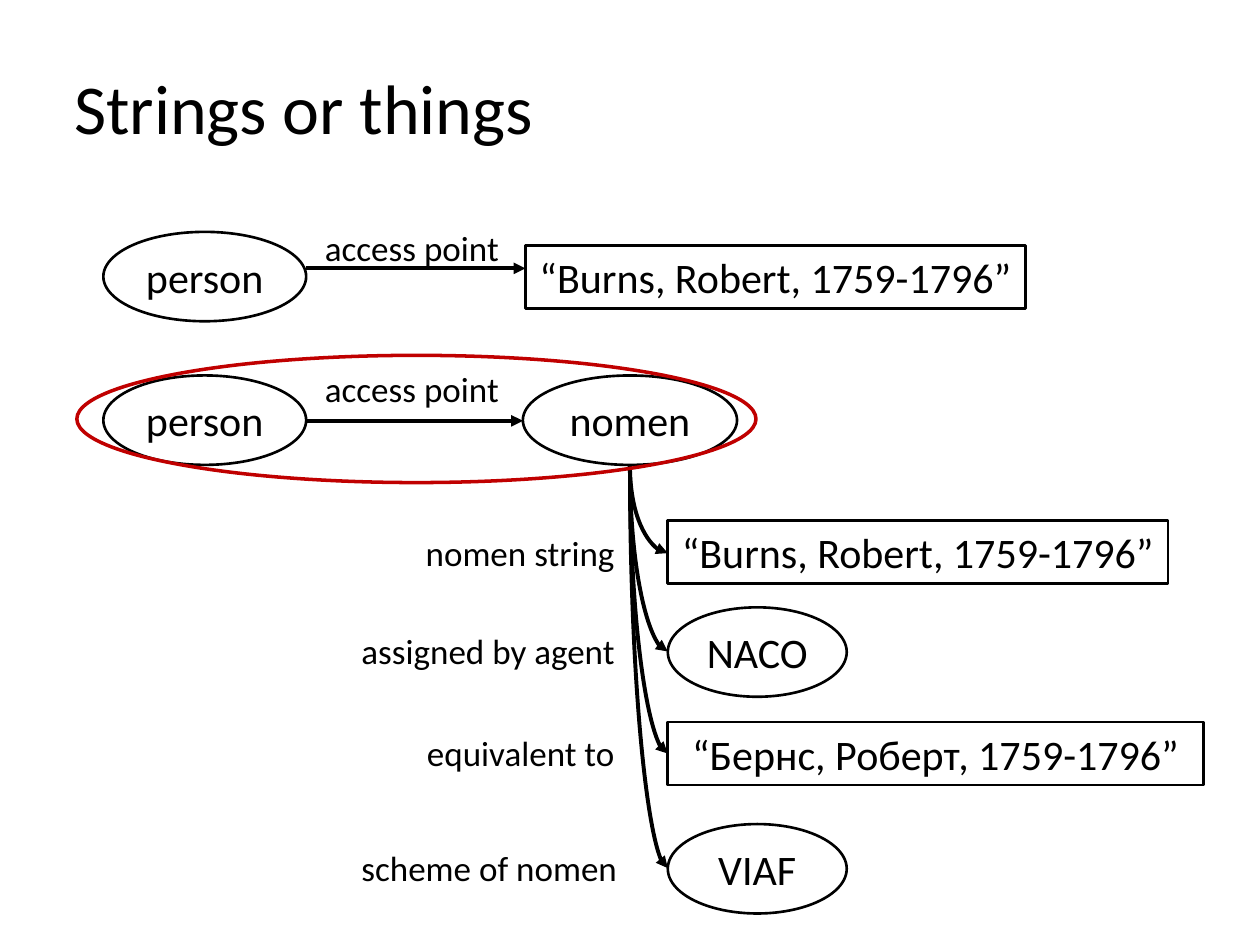
from lxml import etree
from pptx import Presentation
from pptx.dml.color import RGBColor
from pptx.enum.shapes import MSO_CONNECTOR, MSO_SHAPE
from pptx.enum.text import MSO_AUTO_SIZE, MSO_VERTICAL_ANCHOR, PP_ALIGN
from pptx.oxml.ns import qn
from pptx.util import Inches, Pt

OVAL, BOX = MSO_SHAPE.OVAL, MSO_SHAPE.RECTANGLE
CURVE = MSO_CONNECTOR.CURVE
LEFT, CENTER = PP_ALIGN.LEFT, PP_ALIGN.CENTER
TOP, MIDDLE = MSO_VERTICAL_ANCHOR.TOP, MSO_VERTICAL_ANCHOR.MIDDLE
GROW = MSO_AUTO_SIZE.SHAPE_TO_FIT_TEXT
BLACK = RGBColor(0x00, 0x00, 0x00)
RED = RGBColor(0xC0, 0x00, 0x00)


class Diagram:
    """Draws labelled nodes and arrows on one slide in a shared style."""

    font_name = "Calibri"
    node_size, label_size, title_size = 24, 20, 40
    node_line, arrow_line = 1.5, 2.25

    def __init__(self, slide):
        self.shapes = slide.shapes

    def set_text(self, frame, text, size, align, anchor):
        layout = {"word_wrap": False, "auto_size": GROW, "vertical_anchor": anchor}
        for name, value in layout.items():
            setattr(frame, name, value)
        paragraph = frame.paragraphs[0]
        paragraph.text = text
        paragraph.alignment = align
        for name, value in {"name": self.font_name, "size": Pt(size)}.items():
            setattr(paragraph.font, name, value)
        paragraph.font.color.rgb = BLACK

    def label(self, text, left, top, width, height=0.44, size=label_size):
        area = self.shapes.add_textbox(*map(Inches, (left, top, width, height)))
        self.set_text(area.text_frame, text, size, LEFT, TOP)

    def outline(self, kind, left, top, width, height, color=BLACK, weight=node_line):
        shape = self.shapes.add_shape(kind, *map(Inches, (left, top, width, height)))
        shape.shadow.inherit = False
        shape.fill.background()
        shape.line.color.rgb = color
        shape.line.width = Pt(weight)
        return shape

    def node(self, kind, text, left, top, width):
        height = 0.71 if kind == OVAL else 0.5
        shape = self.outline(kind, left, top, width, height)
        self.set_text(shape.text_frame, text, self.node_size, CENTER, MIDDLE)

    def arrow(self, x1, y1, x2, y2):
        connector = self.shapes.add_connector(CURVE, *map(Inches, (x1, y1, x2, y2)))
        connector.line.color.rgb = BLACK
        connector.line.width = Pt(self.arrow_line)
        properties = connector._element.spPr
        etree.SubElement(properties.find(qn("a:ln")), qn("a:tailEnd"), type="triangle")
        etree.SubElement(properties, qn("a:effectLst"))
        return properties

    def branch(self, x1, y1, x2, y2):
        middle_x, middle_y = (x1 + x2) / 2, (y1 + y2) / 2
        half_drop, half_run = (y2 - y1) / 2, (x2 - x1) / 2
        properties = self.arrow(middle_x + half_drop, middle_y - half_run,
                                middle_x - half_drop, middle_y + half_run)
        properties.find(qn("a:xfrm")).set("rot", "16200000")
        properties.find(qn("a:prstGeom")).set("prst", "curvedConnector2")


def main():
    presentation = Presentation()
    presentation.slide_width, presentation.slide_height = Inches(10), Inches(7.5)
    diagram = Diagram(presentation.slides.add_slide(presentation.slide_layouts[6]))
    heading = "“Burns, Robert, 1759-1796”"

    diagram.label("Strings or things", 0.49, 0.46, 3.88, 0.77, diagram.title_size)

    statements = [
        (1.84, 2.13, 1.75, BOX, heading, 4.17, 1.95, 3.97),
        (2.98, 3.34, 2.87, OVAL, "nomen", 4.15, 2.98, 1.7),
    ]
    for person_top, arrow_y, label_top, kind, value, left, top, width in statements:
        diagram.node(OVAL, "person", 0.82, person_top, 1.61)
        diagram.arrow(2.43, arrow_y, left, arrow_y)
        diagram.label("access point", 2.48, label_top, 1.6)
        diagram.node(kind, value, left, top, width)

    nomen_x, nomen_bottom, values_left = 5, 3.69, 5.3
    attributes = [
        ("nomen string", 1.72, 4.17, BOX, heading, 4.13, 3.97, 4.39),
        ("assigned by agent", 2.23, 4.95, OVAL, "NACO", 4.82, 1.42, 5.17),
        ("equivalent to", 1.71, 5.76, BOX, "“Бернс, Роберт, 1759-1796”", 5.73, 4.25, 5.98),
        ("scheme of nomen", 2.23, 6.67, OVAL, "VIAF", 6.54, 1.42, 6.89),
    ]
    for relation, span, label_top, kind, value, top, width, arrow_y in attributes:
        diagram.node(kind, value, values_left, top, width)
        diagram.branch(nomen_x, nomen_bottom, values_left, arrow_y)
        diagram.label(relation, nomen_x - span, label_top, span)

    diagram.outline(OVAL, 0.61, 2.82, 5.39, 1.01, RED, 2)
    presentation.save("out.pptx")


if __name__ == "__main__":
    main()
